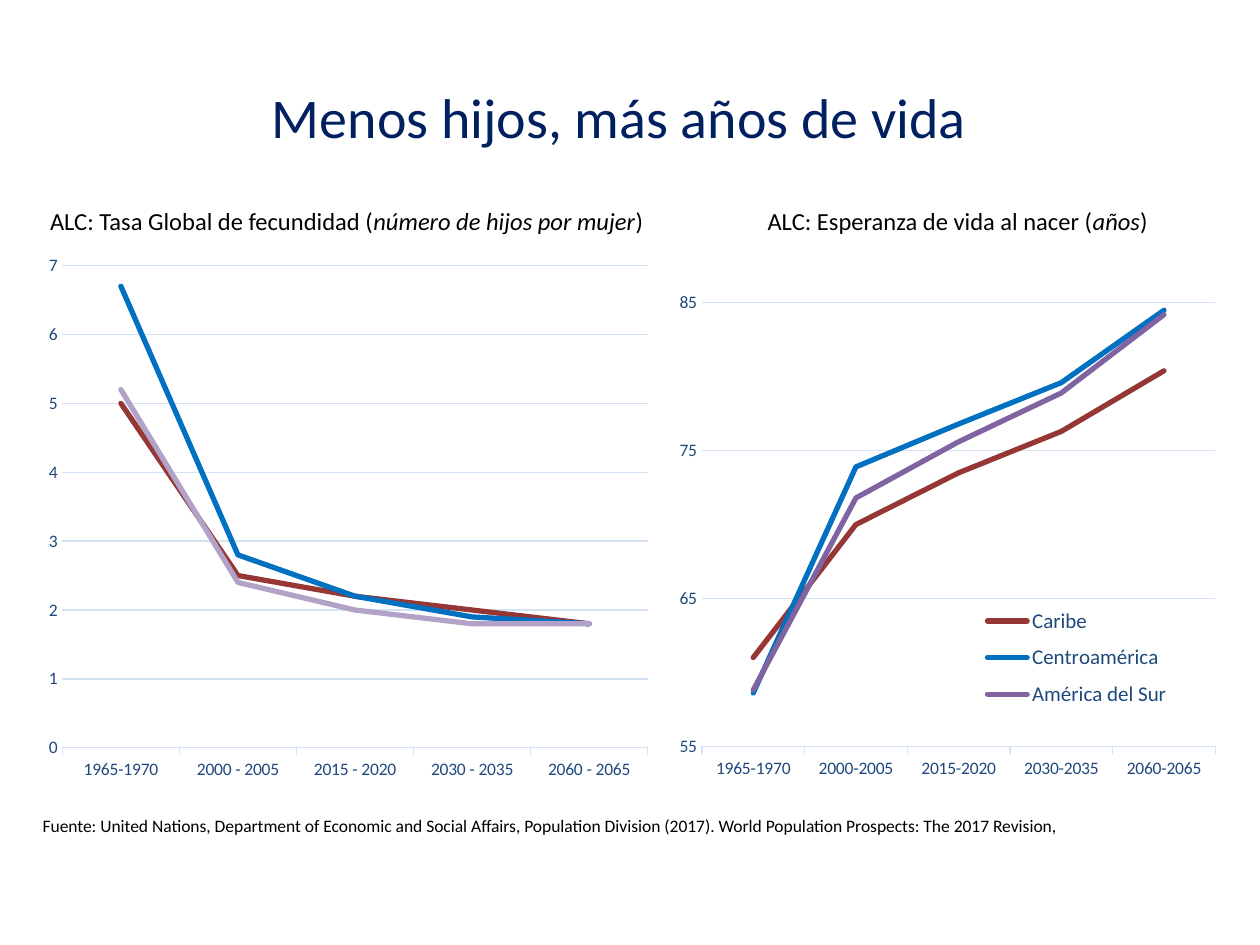
from lxml import etree
from pptx import Presentation
from pptx.chart.data import CategoryChartData
from pptx.dml.color import RGBColor
from pptx.enum import chart as charts, text
from pptx.oxml.ns import qn
from pptx.util import Inches, Pt

FONT = "Calibri"
NAVY = RGBColor(0x00, 0x20, 0x60)
BLACK = RGBColor(0x00, 0x00, 0x00)
LABEL_BLUE = RGBColor(0x1F, 0x49, 0x7D)
GRID_BLUE = RGBColor(0xD4, 0xE3, 0xF4)
RED = RGBColor(0x95, 0x37, 0x35)
BLUE = RGBColor(0x00, 0x70, 0xC0)
LILAC = RGBColor(0xB3, 0xA2, 0xC7)
PURPLE = RGBColor(0x80, 0x64, 0xA2)

PERIODS = [(1965, 1970), (2000, 2005), (2015, 2020), (2030, 2035), (2060, 2065)]
FERTILITY = [
    ("Series 1", (5, 2.5, 2.2, 2, 1.8), RED),
    ("Series 2", (6.7, 2.8, 2.2, 1.9, 1.8), BLUE),
    ("Series 3", (5.2, 2.4, 2, 1.8, 1.8), LILAC),
]
LIFE_EXPECTANCY = [
    ("Caribe", (61, 70, 73.5, 76.3, 80.4), RED),
    ("Centroamérica", (58.6, 73.9, 76.8, 79.6, 84.5), BLUE),
    ("América del Sur", (58.8, 71.8, 75.6, 78.9, 84.2), PURPLE),
]


def style_font(font, size, color):
    font.name = FONT
    font.size = Pt(size)
    font.color.rgb = color


def add_text(page, place, spans, size, color=BLACK, align=text.PP_ALIGN.CENTER):
    box = page.shapes.add_textbox(*map(Inches, place))
    frame = box.text_frame
    frame.word_wrap = True
    frame.vertical_anchor = text.MSO_ANCHOR.MIDDLE
    para = frame.paragraphs[0]
    para.alignment = align
    for wording, italic in spans:
        span = para.add_run()
        span.text = wording
        style_font(span.font, size, color)
        span.font.italic = italic


def add_heading(page, place, name, unit):
    add_text(page, place, [(f"ALC: {name} (", False), (unit, True), (")", False)], 14)


def make_layout(place, inner=False):
    layout = etree.Element(qn("c:layout"))
    manual = etree.SubElement(layout, qn("c:manualLayout"))
    entries = [("layoutTarget", "inner")] if inner else []
    entries += [("xMode", "edge"), ("yMode", "edge"), *zip("xywh", place)]
    for tag, value in entries:
        etree.SubElement(manual, qn(f"c:{tag}")).set("val", str(value))
    return layout


def drop_layout(parent):
    for layout in parent.findall(qn("c:layout")):
        parent.remove(layout)


def style_axes(chart, low, high, step, number_format):
    category, value = chart.category_axis, chart.value_axis
    for axis in (category, value):
        style_font(axis.tick_labels.font, 10, LABEL_BLUE)
        axis.minor_tick_mark = charts.XL_TICK_MARK.NONE
    category.major_tick_mark = charts.XL_TICK_MARK.OUTSIDE
    value.major_tick_mark = charts.XL_TICK_MARK.NONE
    value.minimum_scale, value.maximum_scale, value.major_unit = low, high, step
    value.tick_labels.number_format = number_format
    value.tick_labels.number_format_is_linked = False
    value.format.line.fill.background()
    value.has_major_gridlines = True
    for line in (category.format.line, value.major_gridlines.format.line):
        line.color.rgb = GRID_BLUE
        line.width = Pt(0.75)


def add_line_chart(page, place, rows, dash, scale, number_format, plot_place):
    data = CategoryChartData()
    data.categories = [f"{start}{dash if i else '-'}{end}"
                       for i, (start, end) in enumerate(PERIODS)]
    for name, values, _ in rows:
        data.add_series(name, values)
    frame = page.shapes.add_chart(
        charts.XL_CHART_TYPE.LINE, *map(Inches, place), data)
    chart = frame.chart
    chart.has_title = False
    chart.has_legend = False
    style_font(chart.font, 12, BLACK)
    plot = chart.plots[0]
    plot.vary_by_categories = False
    for series, (_, _, color) in zip(plot.series, rows):
        series.smooth = False
        series.format.line.color.rgb = color
        series.format.line.width = Pt(3)
        for line in series._element.iter(qn("a:ln")):
            line.set("cap", "rnd")
    style_axes(chart, *scale, number_format)
    area = chart._chartSpace.find(f".//{qn('c:plotArea')}")
    drop_layout(area)
    area.insert(0, make_layout(plot_place, inner=True))
    return chart


def add_legend(chart, place):
    chart.has_legend = True
    legend = chart.legend
    legend.position = charts.XL_LEGEND_POSITION.TOP
    legend.include_in_layout = False
    style_font(legend.font, 12, LABEL_BLUE)
    element = legend._element
    drop_layout(element)
    element.find(qn("c:legendPos")).addnext(make_layout(place))


def main():
    deck = Presentation()
    deck.slide_width, deck.slide_height = Inches(10), Inches(7.5)
    page = deck.slides.add_slide(deck.slide_layouts[6])

    add_text(page, (0.25, 0.3, 9.33, 1.25),
             [("Menos hijos, más años de vida", False)], 32, NAVY)
    add_line_chart(page, (0.3, 2.02, 4.89, 4.4), FERTILITY, " - ", (0, 7, 1),
                   "#,##0", (0.04, 0.02, 0.95, 0.87))
    life_chart = add_line_chart(
        page, (5.25, 1.92, 4.58, 4.4), LIFE_EXPECTANCY, "-", (55, 85, 10),
        "0", (0.07, 0.11, 0.89, 0.8))
    add_legend(life_chart, (0.55, 0.64, 0.34, 0.22))
    add_heading(page, (0.08, 1.58, 5.34, 0.34),
                "Tasa Global de fecundidad", "número de hijos por mujer")
    add_heading(page, (5.7, 1.58, 3.8, 0.34), "Esperanza de vida al nacer", "años")
    source = ("Fuente: United Nations, Department of Economic and Social Affairs, "
              "Population Division (2017). World Population Prospects: "
              "The 2017 Revision,")
    add_text(page, (0.24, 6.42, 9.43, 0.27), [(source, False)], 10,
             align=text.PP_ALIGN.LEFT)
    deck.save("out.pptx")


if __name__ == "__main__":
    main()
